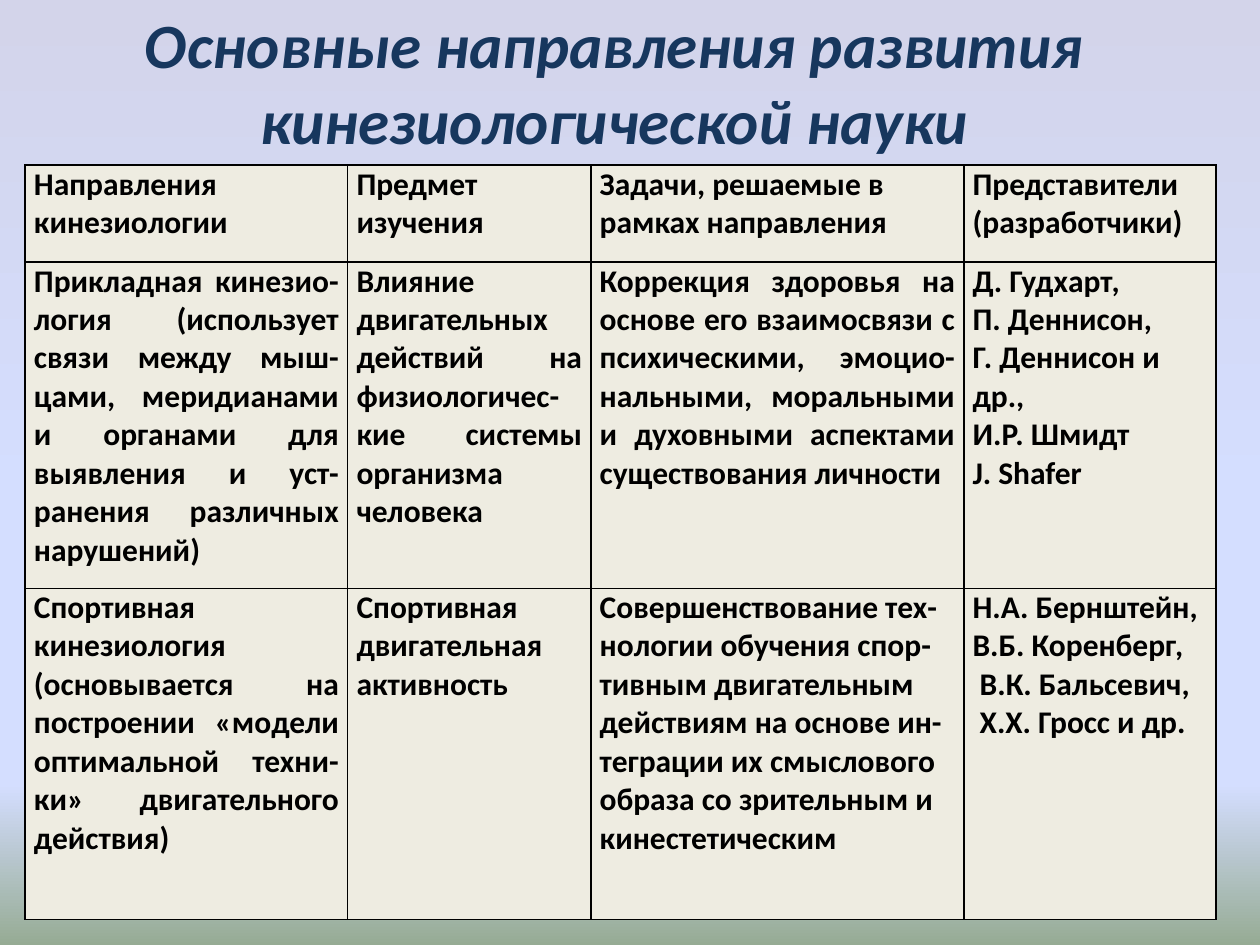
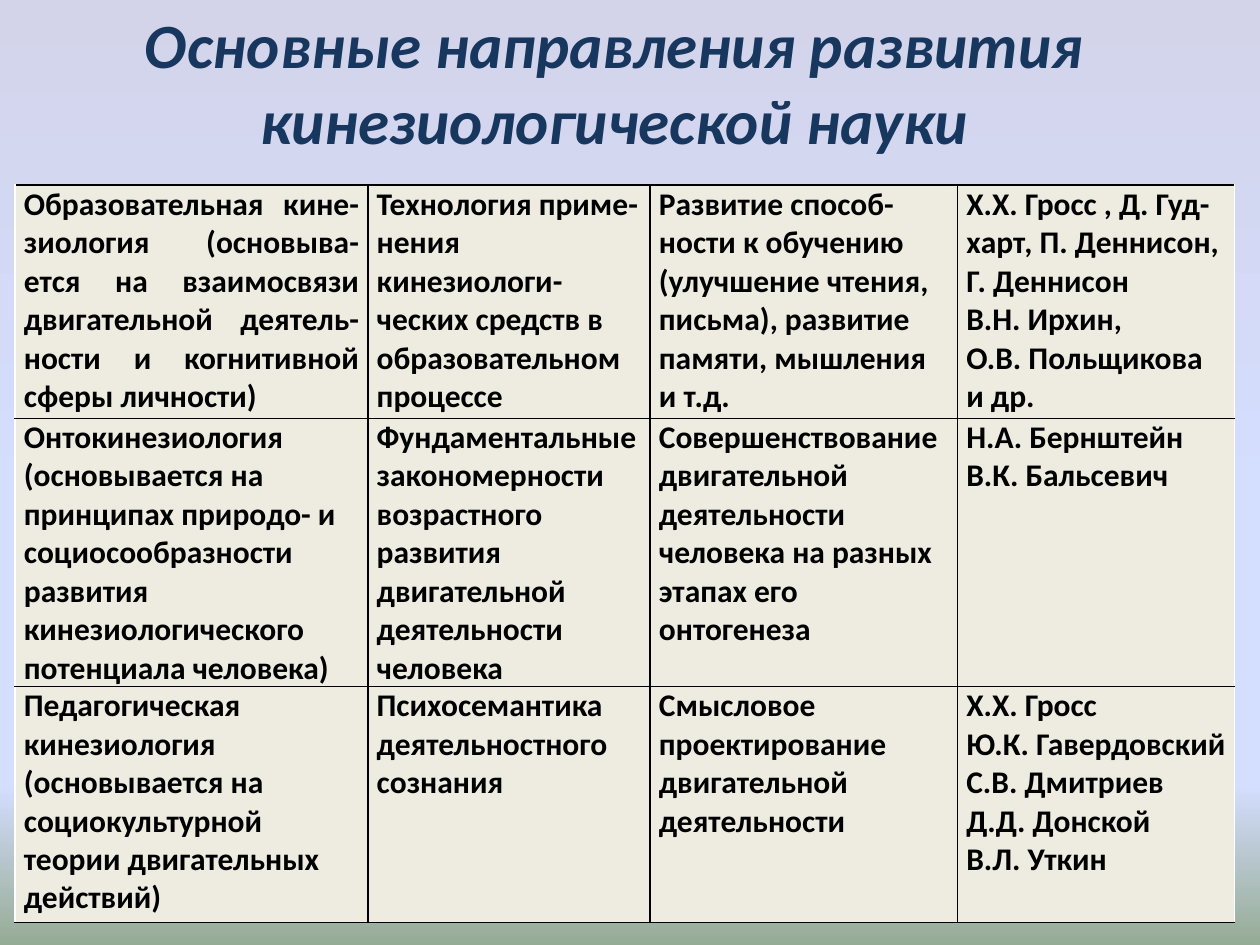
from copy import deepcopy

from lxml import etree
from pptx import Presentation
from pptx import util as u
from pptx.dml.color import RGBColor
from pptx.enum import text
from pptx.oxml.ns import qn

FONT = "Calibri"
NAVY = RGBColor(0x17, 0x37, 0x5E)
BLACK = RGBColor(0x00, 0x00, 0x00)
WHITE = RGBColor(0xFF, 0xFF, 0xFF)
CREAM = RGBColor(0xEE, 0xEC, 0xE1)
LILAC = RGBColor(0xD3, 0xD4, 0xEA)
SKY = RGBColor(0xD4, 0xDE, 0xFF)
MOSS = RGBColor(0x96, 0xAB, 0x94)
BACKDROP = [(0, LILAC), (0.53, SKY), (0.83, SKY), (1, MOSS)]

TITLE = "Основные направления развития кинезиологической науки"
TITLE_BOX = (0.25, 0.3, 9.25, 0.69)

# Each line of a cell's text is a paragraph; "justified" lists (row, column) pairs.
APPLIED_AND_SPORT = {
    "corner": (0.2, 1.31),
    "widths": [2.56, 1.93, 2.96, 2.0],
    "heights": [0.77, 2.59, 2.63],
    "side_colour": BLACK,
    "justified": {(1, 0), (1, 1), (1, 2), (2, 0)},
    "rows": [
        ["Направления кинезиологии",
         "Предмет изучения",
         "Задачи, решаемые в рамках направления",
         "Представители (разработчики)"],
        ["Прикладная кинезио-логия (использует связи между мыш-цами, меридианами "
         "и органами для выявления и уст-ранения различных нарушений)",
         "Влияние двигательных действий на физиологичес-кие системы организма человека",
         "Коррекция здоровья на основе его взаимосвязи с психическими, эмоцио-нальными, "
         "моральными и духовными аспектами существования личности",
         "Д. Гудхарт,\nП. Деннисон,\nГ. Деннисон и др.,\nИ.Р. Шмидт\nJ. Shafer"],
        ["Спортивная кинезиология (основывается на построении «модели оптимальной "
         "техни-ки» двигательного действия)",
         "Спортивная двигательная активность",
         "Совершенствование тех-нологии обучения спор-тивным двигательным действиям "
         "на основе ин-теграции их смыслового образа со зрительным и кинестетическим",
         "Н.А. Бернштейн,\nВ.Б. Коренберг,\n В.К. Бальсевич,\n Х.Х. Гросс и др."],
    ],
}

EDUCATION_AND_PEDAGOGY = {
    "corner": (0.12, 1.47),
    "widths": [2.8, 2.24, 2.44, 2.2],
    "heights": [1.85, 2.13, 1.87],
    "side_colour": WHITE,
    "justified": {(0, 0)},
    "rows": [
        ["Образовательная кине-зиология (основыва-ется на взаимосвязи двигательной "
         "деятель-ности и когнитивной сферы личности)",
         "Технология приме-нения кинезиологи-ческих средств в образовательном процессе",
         "Развитие способ-ности к обучению (улучшение чтения, письма), развитие памяти, "
         "мышления и т.д.",
         "Х.Х. Гросс , Д. Гуд-харт, П. Деннисон,\nГ. Деннисон\nВ.Н. Ирхин,\n"
         "О.В. Польщикова и др."],
        ["Онтокинезиология\n(основывается на принципах природо- и социосообразности "
         "развития кинезиологического потенциала человека)",
         "Фундаментальные закономерности возрастного развития двигательной "
         "деятельности человека",
         "Совершенствование двигательной деятельности человека на разных этапах "
         "его онтогенеза",
         "Н.А. Бернштейн\nВ.К. Бальсевич"],
        ["Педагогическая кинезиология (основывается на социокультурной теории "
         "двигательных действий)",
         "Психосемантика деятельностного сознания",
         "Смысловое проектирование двигательной деятельности",
         "Х.Х. Гросс\nЮ.К. Гавердовский\nС.В. Дмитриев\nД.Д. Донской\nВ.Л. Уткин"],
    ],
}


def paint_backdrop(page):
    fill = page.background.fill
    fill.gradient()
    fill.gradient_angle = 270
    stop_list = page.element.find(".//" + qn("a:gsLst"))
    while len(stop_list) < len(BACKDROP):
        stop_list.append(deepcopy(stop_list[0]))
    for stop, (position, colour) in zip(fill.gradient_stops, BACKDROP):
        stop.position = position
        stop.color.rgb = colour


def style_paragraph(para, size, colour, alignment):
    para.alignment = alignment
    font = para.font
    font.name, font.size, font.bold = FONT, u.Pt(size), True
    font.color.rgb = colour


def add_title(page, box):
    frame = page.shapes.add_textbox(*map(u.Inches, box)).text_frame
    frame.word_wrap = True
    frame.vertical_anchor = text.MSO_ANCHOR.MIDDLE
    frame.text = TITLE
    para = frame.paragraphs[0]
    style_paragraph(para, 36, NAVY, text.PP_ALIGN.CENTER)
    para.font.italic = True


def set_border(cell, side, colour):
    """Draw one edge of a cell; side is L, R, T or B."""
    properties = cell._tc.get_or_add_tcPr()
    line = etree.SubElement(properties, qn(f"a:ln{side}"), w=str(u.Pt(1)))
    fill = etree.SubElement(line, qn("a:solidFill"))
    etree.SubElement(fill, qn("a:srgbClr"), val=str(colour))


def fill_cell(cell, words, alignment, left_colour, right_colour):
    cell.margin_left = cell.margin_right = u.Inches(0.07)
    cell.margin_top = cell.margin_bottom = 0
    for side, colour in zip("LRTB", (left_colour, right_colour, BLACK, BLACK)):
        set_border(cell, side, colour)
    cell.fill.solid()
    cell.fill.fore_color.rgb = CREAM
    cell.text_frame.text = words
    for para in cell.text_frame.paragraphs:
        style_paragraph(para, 18, BLACK, alignment)


def add_directions_table(page, content):
    widths, heights, rows = content["widths"], content["heights"], content["rows"]
    box = (*content["corner"], sum(widths), sum(heights))
    table = page.shapes.add_table(len(rows), len(widths), *map(u.Inches, box)).table
    table.first_row = table.horz_banding = False
    for column, width in zip(table.columns, widths):
        column.width = u.Inches(width)
    for row, height in zip(table.rows, heights):
        row.height = u.Inches(height)

    side_colour, last = content["side_colour"], len(widths) - 1
    for r, row in enumerate(rows):
        for c, words in enumerate(row):
            justified = (r, c) in content["justified"]
            fill_cell(
                table.cell(r, c),
                words,
                text.PP_ALIGN.JUSTIFY if justified else text.PP_ALIGN.LEFT,
                side_colour if c == 0 else BLACK,
                side_colour if c == last else BLACK,
            )


def add_directions_page(deck, content):
    page = deck.slides.add_slide(deck.slide_layouts[6])
    paint_backdrop(page)
    add_title(page, TITLE_BOX)
    add_directions_table(page, content)


def main():
    deck = Presentation()
    deck.slide_width, deck.slide_height = u.Inches(10), u.Inches(7.5)
    for content in (APPLIED_AND_SPORT, EDUCATION_AND_PEDAGOGY):
        add_directions_page(deck, content)
    deck.save("out.pptx")


if __name__ == "__main__":
    main()
